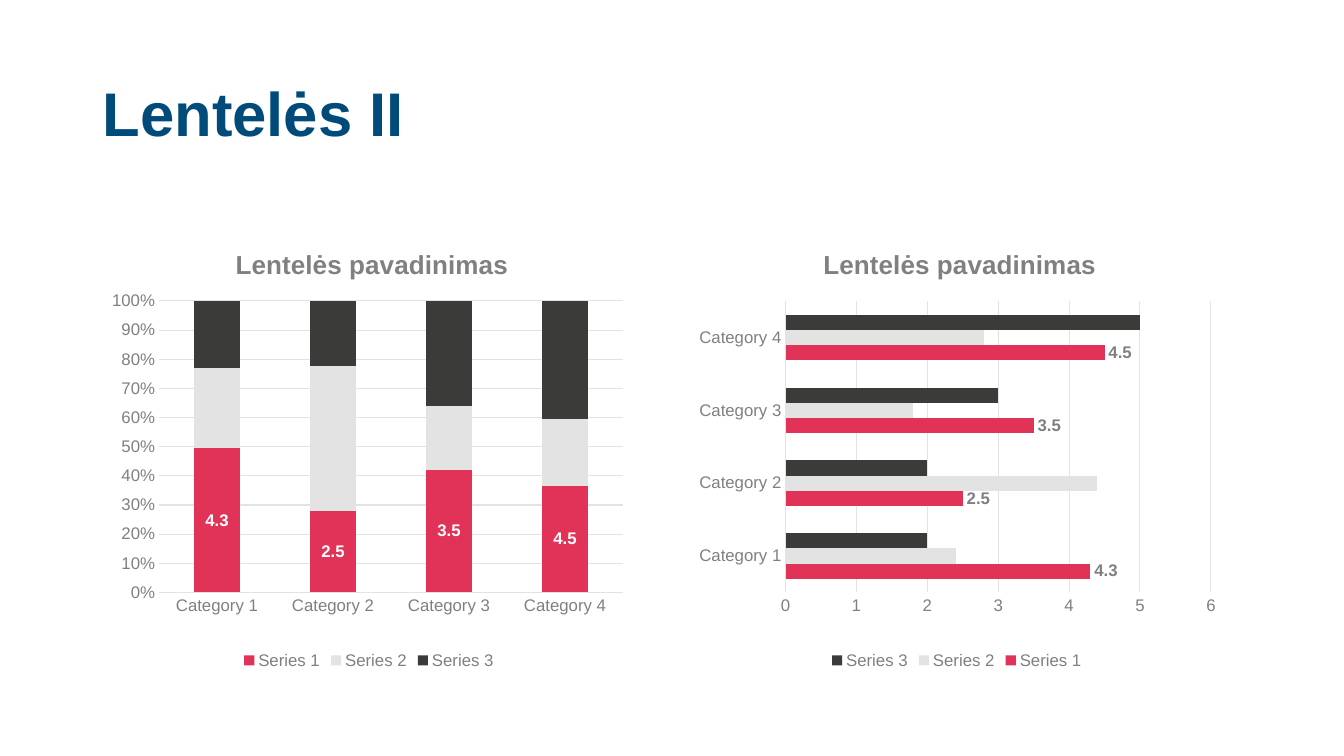
import pptx
import pptx.chart.data
import pptx.dml.color
import pptx.enum.chart
import pptx.enum.text
import pptx.oxml
import pptx.oxml.ns
import pptx.util
from pptx.util import Inches

NAVY = pptx.dml.color.RGBColor(0x00, 0x4B, 0x79)
RED = pptx.dml.color.RGBColor(0xE0, 0x33, 0x57)
LIGHT = pptx.dml.color.RGBColor(0xE2, 0xE3, 0xE2)
DARK = pptx.dml.color.RGBColor(0x3B, 0x3C, 0x3A)
GRAY = pptx.dml.color.RGBColor(0x80, 0x80, 0x80)
WHITE = pptx.dml.color.RGBColor(0xFF, 0xFF, 0xFF)

CATEGORIES = [f"Category {number}" for number in range(1, 5)]
SERIES = [
    ("Series 1", (4.3, 2.5, 3.5, 4.5), RED),
    ("Series 2", (2.4, 4.4, 1.8, 2.8), LIGHT),
    ("Series 3", (2, 2, 3, 5), DARK),
]


class SlideBuilder:
    font_name = "Arial"

    def __init__(self, slide):
        self.slide = slide

    def style_font(self, font, size, color, bold=False):
        font.name = self.font_name
        font.size = pptx.util.Pt(size)
        font.color.rgb = color
        font.bold = bold

    def add_heading(self, text, left, top, width, height):
        heading = self.slide.shapes.add_textbox(
            Inches(left), Inches(top), Inches(width), Inches(height))
        frame = heading.text_frame
        frame.word_wrap = True
        frame.vertical_anchor = pptx.enum.text.MSO_ANCHOR.TOP
        paragraph = frame.paragraphs[0]
        paragraph.text = text
        paragraph.line_spacing = 0.9
        self.style_font(paragraph.font, 44, NAVY, bold=True)

    def set_layout(self, parent, position, size=None):
        values = dict(zip("xy", position))
        if size:
            values.update(zip("wh", size))
        target = '<c:layoutTarget val="inner"/>' if size else ""
        modes = "".join(f'<c:{key}Mode val="edge"/>' for key in "xy")
        places = "".join(f'<c:{key} val="{value}"/>' for key, value in values.items())
        layout = pptx.oxml.parse_xml(
            f'<c:layout {pptx.oxml.ns.nsdecls("c")}><c:manualLayout>'
            f"{target}{modes}{places}</c:manualLayout></c:layout>")
        for old in parent.findall(pptx.oxml.ns.qn("c:layout")):
            parent.remove(old)
        text = parent.find(pptx.oxml.ns.qn("c:tx"))
        parent.insert(0 if text is None else 1, layout)

    def style_axis(self, axis):
        axis.major_tick_mark = pptx.enum.chart.XL_TICK_MARK.NONE
        axis.minor_tick_mark = pptx.enum.chart.XL_TICK_MARK.NONE
        self.style_font(axis.tick_labels.font, 12, GRAY)

    def style_line(self, line):
        line.color.rgb = LIGHT
        line.width = pptx.util.Pt(0.75)

    def add_bar_chart(self, kind, left, title, gap, overlap, plot_position,
                      plot_size, label_position, label_color, number_format):
        data = pptx.chart.data.CategoryChartData()
        data.categories = CATEGORIES
        for name, values, _ in SERIES:
            data.add_series(name, values)
        chart = self.slide.shapes.add_chart(
            kind, Inches(left), Inches(2.23), Inches(5.48), Inches(4.45), data).chart
        self.style_font(chart.font, 12, GRAY)

        chart.has_title = True
        heading = chart.chart_title.text_frame.paragraphs[0]
        heading.text = title
        self.style_font(heading.font, 18.6, GRAY, bold=True)
        chart.chart_title.include_in_layout = False
        self.set_layout(chart.chart_title._element, (0.25, 0.04))

        chart.has_legend = True
        chart.legend.position = pptx.enum.chart.XL_LEGEND_POSITION.BOTTOM
        chart.legend.include_in_layout = False
        self.style_font(chart.legend.font, 12, GRAY)

        self.style_axis(chart.category_axis)
        self.style_line(chart.category_axis.format.line)
        self.style_axis(chart.value_axis)
        chart.value_axis.format.line.fill.background()
        chart.value_axis.has_major_gridlines = True
        self.style_line(chart.value_axis.major_gridlines.format.line)
        chart.value_axis.tick_labels.number_format = number_format
        chart.value_axis.tick_labels.number_format_is_linked = False

        plot = chart.plots[0]
        plot.vary_by_categories = False
        plot.gap_width = gap
        plot.overlap = overlap
        self.set_layout(chart._chartSpace.chart.plotArea, plot_position, plot_size)
        for series, (_, _, color) in zip(plot.series, SERIES):
            series.format.fill.solid()
            series.format.fill.fore_color.rgb = color
        labels = plot.series[0].data_labels
        labels.show_value = True
        labels.position = label_position
        self.style_font(labels.font, 12, label_color, bold=True)


def main():
    presentation = pptx.Presentation()
    presentation.slide_width = Inches(13.33)
    presentation.slide_height = Inches(7.5)
    builder = SlideBuilder(presentation.slides.add_slide(presentation.slide_layouts[6]))
    chart_type = pptx.enum.chart.XL_CHART_TYPE
    label_place = pptx.enum.chart.XL_LABEL_POSITION

    builder.add_bar_chart(
        chart_type.COLUMN_STACKED_100, 0.92, "Lentelės pavadinimas", 150, 100,
        (0.12, 0.17), (0.84, 0.65), label_place.CENTER, WHITE, "0%")
    builder.add_bar_chart(
        chart_type.BAR_CLUSTERED, 6.75, "Lentelės pavadinimas", 182, 0,
        (0.19, 0.17), (0.77, 0.65), label_place.OUTSIDE_END, GRAY, "General")
    builder.add_heading("Lentelės II", 0.92, 0.78, 9.77, 1.45)
    presentation.save("out.pptx")


if __name__ == "__main__":
    main()
